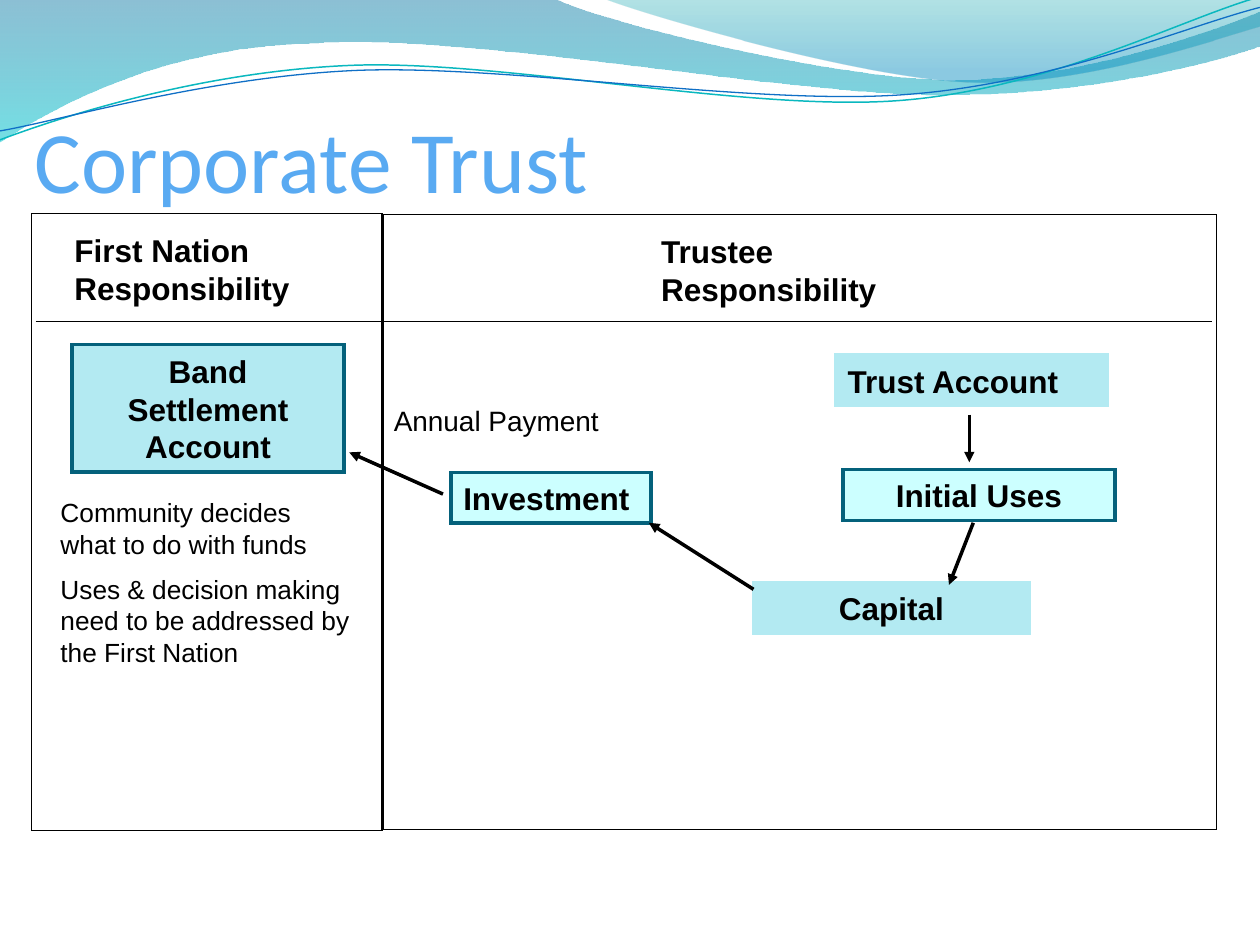
from lxml import etree
from pptx import Presentation, util as u
from pptx.dml.color import RGBColor
from pptx.enum import shapes as sh, text as tx
from pptx.oxml.ns import qn

THEME = dict(
    ink="000000", title="59AAF2", edge="04617B", pale="B3EAF2", mint="CCFFFF",
    teal="0AB8BF", blue="0F6FC6", font="Arial", head="Calibri",
    big=50, bold=18, label=16, note=15, thin=0.75, thick=2,
)
LEFT, MID = tx.PP_ALIGN.LEFT, tx.PP_ALIGN.CENTER

# All places are in centimetres. A path is a start point, then steps:
# one point for a straight line, three for a Bezier curve.
BANDS = [
    ([(0, 0), [(11.18, -0.03)],
      [(12.09, 0.43), (16.87, 1.6), (19.25, 1.6)],
      [(21.67, 1.6), (24.33, 0.66), (25.4, 0.23)], [(25.43, 0.91)],
      [(24.97, 1.12), (22.1, 1.93), (18.95, 1.91)],
      [(15.8, 1.91), (9.7, 0.71), (6.53, 0.86)],
      [(3.28, 0.91), (1.17, 2.11), (-0.03, 2.87)], [(0, 0)]],
     [(0, "0074A1", 45), (1, "00C6CF", 55)]),
    ([(12.17, -0.03), [(12.93, 0.28), (17.32, 1.57), (19.53, 1.65)],
      [(21.74, 1.75), (24.41, 0.81), (25.4, 0.53)], [(25.4, 0)],
      [(12.17, -0.03)]],
     [(0, "00A1A9", 30), (0.8, "008BBF", 45)]),
]
WAVES = [
    ([(0, 2.82), [(1.22, 2.36), (4.01, 1.45), (7.04, 1.32)],
      [(10.03, 1.19), (15.06, 2.26), (18.11, 2.03)],
      [(21.16, 1.8), (23.83, 0.38), (25.35, -0.05)]], "teal", 0.85),
    ([(0, 2.64), [(1.19, 2.44), (4.17, 1.55), (7.19, 1.42)],
      [(10.24, 1.3), (15.16, 2.13), (18.21, 1.91)],
      [(21.23, 1.7), (23.9, 0.53), (25.4, 0.15)]], "blue", 0.75),
]
PANELS = [(0.64, 4.3, 7.06, 12.44), (7.72, 4.32, 16.81, 12.4)]
NODES = [
    ("Band Settlement Account", (1.45, 6.95, 5.49, 2.57), "pale", "edge", MID),
    ("Trust Account", (16.84, 7.16, 5.49, 1.02), "pale", "pale", LEFT),
    ("Initial Uses", (16.99, 9.47, 5.49, 1.02), "mint", "edge", MID),
    ("Capital", (15.19, 11.75, 5.56, 1.02), "pale", "pale", MID),
    ("Investment", (9.09, 9.53, 4.04, 1.02), "mint", "edge", LEFT),
]
RULE = (0.72, 6.48, 24.43, 6.48)
ARROWS = [
    (15.19, 11.88, 13.08, 10.54), (8.93, 9.96, 7.04, 9.12),
    (19.54, 8.36, 19.54, 9.32), (19.62, 10.54, 19.13, 11.79),
]
TITLE = ("Corporate Trust", (0.7, 0.39, 22.86, 3.86))
HEADS = [
    ("First Nation Responsibility", (1.25, 4.54, 5.64, 1.8)),
    ("Trustee Responsibility", (13.08, 4.56, 5.64, 1.8)),
]
LABEL = ("Annual Payment", (7.69, 8.01, 4.8, 0.94))
NOTES = ("Community decides\nwhat to do with funds\n"
         "Uses & decision making need to be addressed by the First Nation",
         (0.97, 9.88, 6.5, 3.78))


def cm(nums):
    return [u.Cm(n) for n in nums]


def rgb(key):
    return RGBColor.from_string(THEME[key])


def stroke(line, key, width):
    line.color.rgb = rgb(key)
    line.width = u.Pt(width)


def write(shape, words, size, bold=False, color="ink", font="font", align=LEFT):
    frame = shape.text_frame
    frame.word_wrap = True
    frame.text = words
    for par in frame.paragraphs:
        par.alignment = align
        for run in par.runs:
            run.font.size = u.Pt(THEME[size])
            run.font.bold = bold
            run.font.name = THEME[font]
            run.font.color.rgb = rgb(color)
    return frame


def outline(slide, path, close):
    """Draw a path, joining each three-point step into one Bezier curve."""
    start, *parts = path
    pen = slide.shapes.build_freeform(*cm(start))
    pen.add_line_segments([cm(p) for part in parts for p in part], close=close)
    shape = pen.convert_to_shape()
    shape.shadow.inherit = False
    legs = iter(list(shape._element.spPr.iter(qn("a:lnTo"))))
    for part in parts:
        first, *rest = [next(legs) for _ in part]
        if rest:
            first.tag = qn("a:cubicBezTo")
            for leg in rest:
                first.append(leg[0])
                leg.getparent().remove(leg)
    return shape


def band(slide, path, stops):
    shape = outline(slide, path, True)
    shape.line.fill.background()
    shape.fill.gradient()
    shape.fill.gradient_angle = 270
    for stop, (pos, color, _) in zip(shape.fill.gradient_stops, stops):
        stop.position = pos
        stop.color.rgb = RGBColor.from_string(color)
    tints = shape._element.spPr.iter(qn("a:srgbClr"))
    for tint, (_, _, alpha) in zip(tints, stops):
        etree.SubElement(tint, qn("a:alpha")).set("val", str(alpha * 1000))


def box(slide, place, edge, width, fill=None):
    shape = slide.shapes.add_shape(sh.MSO_SHAPE.RECTANGLE, *cm(place))
    shape.shadow.inherit = False
    stroke(shape.line, edge, width)
    join = etree.SubElement(shape.line._get_or_add_ln(), qn("a:miter"))
    join.set("lim", "800000")
    if fill:
        shape.fill.solid()
        shape.fill.fore_color.rgb = rgb(fill)
    else:
        shape.fill.background()
    return shape


def link(slide, ends, width, arrow=False):
    wire = slide.shapes.add_connector(sh.MSO_CONNECTOR.STRAIGHT, *cm(ends))
    stroke(wire.line, "ink", width)
    if arrow:
        tip = etree.SubElement(wire.line._get_or_add_ln(), qn("a:tailEnd"))
        tip.set("type", "triangle")
    etree.SubElement(wire._element.spPr, qn("a:effectLst"))


def label(slide, item, size, **style):
    words, place = item
    return write(slide.shapes.add_textbox(*cm(place)), words, size, **style)


def main():
    deck = Presentation()
    deck.slide_width, deck.slide_height = cm((25.4, 19.05))
    slide = deck.slides.add_slide(deck.slide_layouts[6])

    for path, stops in BANDS:
        band(slide, path, stops)
    for path, color, width in WAVES:
        wave = outline(slide, path, False)
        wave.fill.background()
        stroke(wave.line, color, width)

    for place in PANELS:
        box(slide, place, "ink", THEME["thin"])
    for words, place, fill, edge, align in NODES:
        node = box(slide, place, edge, THEME["thick"], fill)
        frame = write(node, words, "bold", bold=True, align=align)
        frame.vertical_anchor = tx.MSO_ANCHOR.MIDDLE
    for ends in ARROWS:
        link(slide, ends, THEME["thick"], arrow=True)
    link(slide, RULE, THEME["thin"])

    title = label(slide, TITLE, "big", color="title", font="head")
    title.vertical_anchor = tx.MSO_ANCHOR.BOTTOM
    title.margin_left = title.margin_right = title.margin_bottom = 0
    for head in HEADS:
        label(slide, head, "bold", bold=True)
    label(slide, LABEL, "label")
    notes = label(slide, NOTES, "note")
    notes.paragraphs[-1].space_before = u.Pt(8)

    deck.save("out.pptx")


if __name__ == "__main__":
    main()
